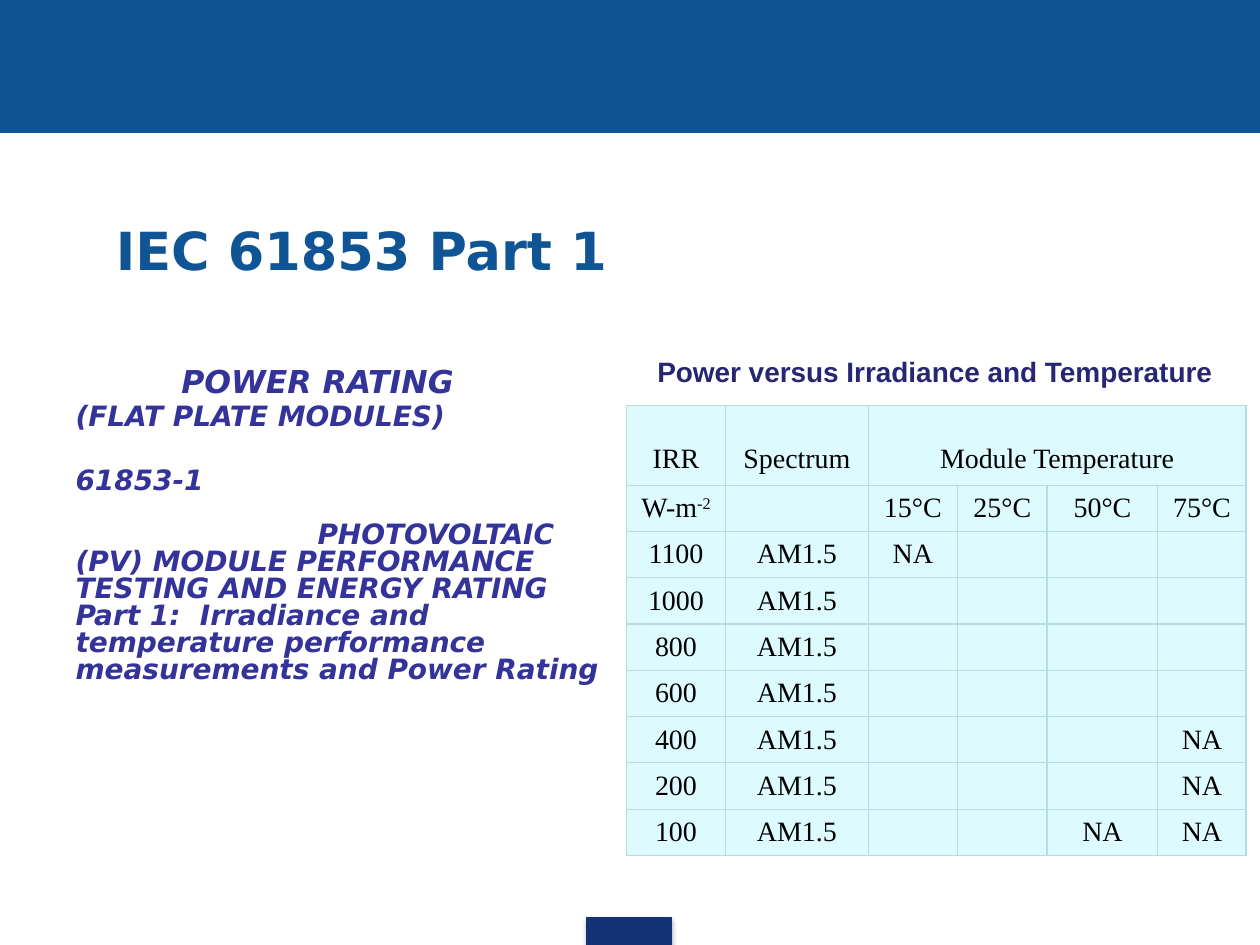
from lxml import etree
from pptx import Presentation
from pptx.dml.color import RGBColor
from pptx.enum.shapes import MSO_SHAPE
from pptx.enum.text import MSO_ANCHOR, MSO_AUTO_SIZE, PP_ALIGN
from pptx.oxml import parse_xml
from pptx.oxml.ns import nsdecls, qn
from pptx.util import Inches, Pt

BAND_BLUE = RGBColor(0x0F, 0x54, 0x94)
TAB_BLUE = RGBColor(0x13, 0x31, 0x76)
BODY_BLUE = RGBColor(0x33, 0x33, 0x99)
CAPTION_BLUE = RGBColor(0x26, 0x26, 0x73)
CELL_FILL = RGBColor(0xDD, 0xFB, 0xFF)
WHITE = RGBColor(0xFF, 0xFF, 0xFF)
BLACK = RGBColor(0, 0, 0)
BORDER = "B6DCDF"

COLUMN_WIDTHS = (0.79, 1.13, 0.71, 0.71, 0.88, 0.7)
HEADER_HEIGHT = 0.63
NO_STYLE = "{2D5ABB26-0587-4C30-8999-92F81FD0307C}"
# Irradiance, then readings at 15, 25, 50 and 75 °C
READINGS = (
    ("1100", "NA", "", "", ""),
    ("1000", "", "", "", ""),
    ("800", "", "", "", ""),
    ("600", "", "", "", ""),
    ("400", "", "", "", "NA"),
    ("200", "", "", "", "NA"),
    ("100", "", "", "NA", "NA"),
)
TABLE_ROWS = [
    ("IRR", "Spectrum", "Module Temperature", "", "", ""),
    ("W-m", "", "15°C", "25°C", "50°C", "75°C"),
] + [(irradiance, "AM1.5", *values) for irradiance, *values in READINGS]


def place(shape, box):
    shape.left, shape.top, shape.width, shape.height = map(Inches, box)


def style_font(font, name, size, color, bold=False, italic=False):
    font.name, font.size = name, Pt(size)
    font.bold, font.italic = bold, italic
    font.color.rgb = color


def add_bar(slide, box, color):
    bar = slide.shapes.add_shape(MSO_SHAPE.RECTANGLE, *map(Inches, box))
    bar.fill.solid()
    bar.fill.fore_color.rgb = color
    bar.line.color.rgb = color
    bar.line.width = Pt(0.75)
    bar.shadow.inherit = False
    return bar


def add_footer_tab(slide, box):
    tab = add_bar(slide, box, TAB_BLUE)
    effects = tab._element.spPr.find(qn("a:effectLst"))
    effects.append(parse_xml(
        f'<a:outerShdw {nsdecls("a")} blurRad="{Pt(3.1)}" dist="{Pt(1.8)}" dir="5400000"'
        ' rotWithShape="0"><a:srgbClr val="000000"><a:alpha val="35000"/></a:srgbClr>'
        '</a:outerShdw>'))


def fill_title(slide, box):
    title = slide.shapes.title
    place(title, box)
    frame = title.text_frame
    frame.text = "IEC 61853 Part 1"
    frame.auto_size = MSO_AUTO_SIZE.NONE
    frame.vertical_anchor = MSO_ANCHOR.MIDDLE
    line = frame.paragraphs[0]
    line.alignment = PP_ALIGN.LEFT
    line._p.get_or_add_pPr().set("marL", str(Inches(0.39)))
    style_font(line.runs[0].font, "DejaVu Sans", 30, BAND_BLUE, bold=True)


def fill_description(slide, box):
    description = slide.placeholders[1]
    place(description, box)
    description.fill.solid()
    description.fill.fore_color.rgb = WHITE
    frame = description.text_frame
    frame.auto_size = MSO_AUTO_SIZE.NONE
    # Text, size, alignment, first-line indent, space before
    lines = (
        ("POWER RATING", 18, PP_ALIGN.CENTER, -0.38, 0),
        ("(FLAT PLATE MODULES)", 16, PP_ALIGN.LEFT, 0, 3),
        ("61853-1", 16, PP_ALIGN.LEFT, 0, 21.5),
        ("PHOTOVOLTAIC (PV) MODULE PERFORMANCE TESTING AND ENERGY RATING "
         "Part 1:  Irradiance and temperature performance measurements "
         "and Power Rating", 16, PP_ALIGN.LEFT, 1.92, 15.5),
    )
    for index, (text, size, alignment, indent, before) in enumerate(lines):
        line = frame.paragraphs[0] if index == 0 else frame.add_paragraph()
        line.text = text
        line.alignment = alignment
        line.line_spacing = 0.8
        line.space_before = Pt(before)
        properties = line._p.get_or_add_pPr()
        properties.set("marL", str(Inches(0.38)))
        properties.set("indent", str(Inches(indent)))
        etree.SubElement(properties, qn("a:buNone"))
        style_font(line.runs[0].font, "DejaVu Sans", size, BODY_BLUE, True, True)


def add_caption(slide, box):
    frame = slide.shapes.add_textbox(*map(Inches, box)).text_frame
    frame.word_wrap = True
    frame.vertical_anchor = MSO_ANCHOR.MIDDLE
    frame.text = "Power versus Irradiance and Temperature"
    caption = frame.paragraphs[0]
    caption.alignment = PP_ALIGN.CENTER
    style_font(caption.runs[0].font, "Arial", 16, CAPTION_BLUE, bold=True)


def set_borders(cell):
    properties = cell._tc.get_or_add_tcPr()
    for position, side in enumerate(("lnL", "lnR", "lnT", "lnB")):
        properties.insert(position, parse_xml(
            f'<a:{side} {nsdecls("a")} w="{Pt(0.75)}"><a:solidFill>'
            f'<a:srgbClr val="{BORDER}"/></a:solidFill></a:{side}>'))


def add_power_table(slide, box):
    frame = slide.shapes.add_table(
        len(TABLE_ROWS), len(COLUMN_WIDTHS), *map(Inches, box))
    table = frame.table
    frame._element.find(".//" + qn("a:tableStyleId")).text = NO_STYLE
    table.first_row = table.horz_banding = False
    for column, width in zip(table.columns, COLUMN_WIDTHS):
        column.width = Inches(width)
    row_height = (box[3] - HEADER_HEIGHT) / (len(TABLE_ROWS) - 1)
    for index, values in enumerate(TABLE_ROWS):
        is_header = index == 0
        table.rows[index].height = Inches(HEADER_HEIGHT if is_header else row_height)
        for column, value in enumerate(values):
            cell = table.cell(index, column)
            cell.fill.solid()
            cell.fill.fore_color.rgb = CELL_FILL
            set_borders(cell)
            cell.margin_left = cell.margin_right = Inches(0.05)
            cell.margin_top = Inches(0.02)
            cell.margin_bottom = Inches(0.08 if is_header else 0.02)
            cell.vertical_anchor = MSO_ANCHOR.BOTTOM if is_header else MSO_ANCHOR.MIDDLE
            if value:
                cell.text = value
                entry = cell.text_frame.paragraphs[0]
                entry.alignment = PP_ALIGN.CENTER
                style_font(entry.runs[0].font, "Times New Roman", 16, BLACK)
    table.cell(0, 2).merge(table.cell(0, 5))

    # Raised exponent of the irradiance unit
    exponent = table.cell(1, 0).text_frame.paragraphs[0].add_run()
    exponent.text = "-2"
    style_font(exponent.font, "Times New Roman", 16, BLACK)
    exponent.font._element.set("baseline", "30000")


def main():
    presentation = Presentation()
    presentation.slide_width, presentation.slide_height = Inches(10), Inches(7.5)
    slide = presentation.slides.add_slide(presentation.slide_layouts[1])
    add_bar(slide, (0, 0, 10, 1.05), BAND_BLUE)
    add_footer_tab(slide, (4.66, 7.28, 0.67, 0.22))
    fill_title(slide, (0.43, 1.47, 9, 1.02))
    fill_description(slide, (0.12, 2.88, 4.8, 3.86))
    add_caption(slide, (5.02, 2.77, 4.8, 0.36))
    add_power_table(slide, (4.97, 3.22, 4.92, 3.57))
    presentation.save("out.pptx")


if __name__ == "__main__":
    main()
